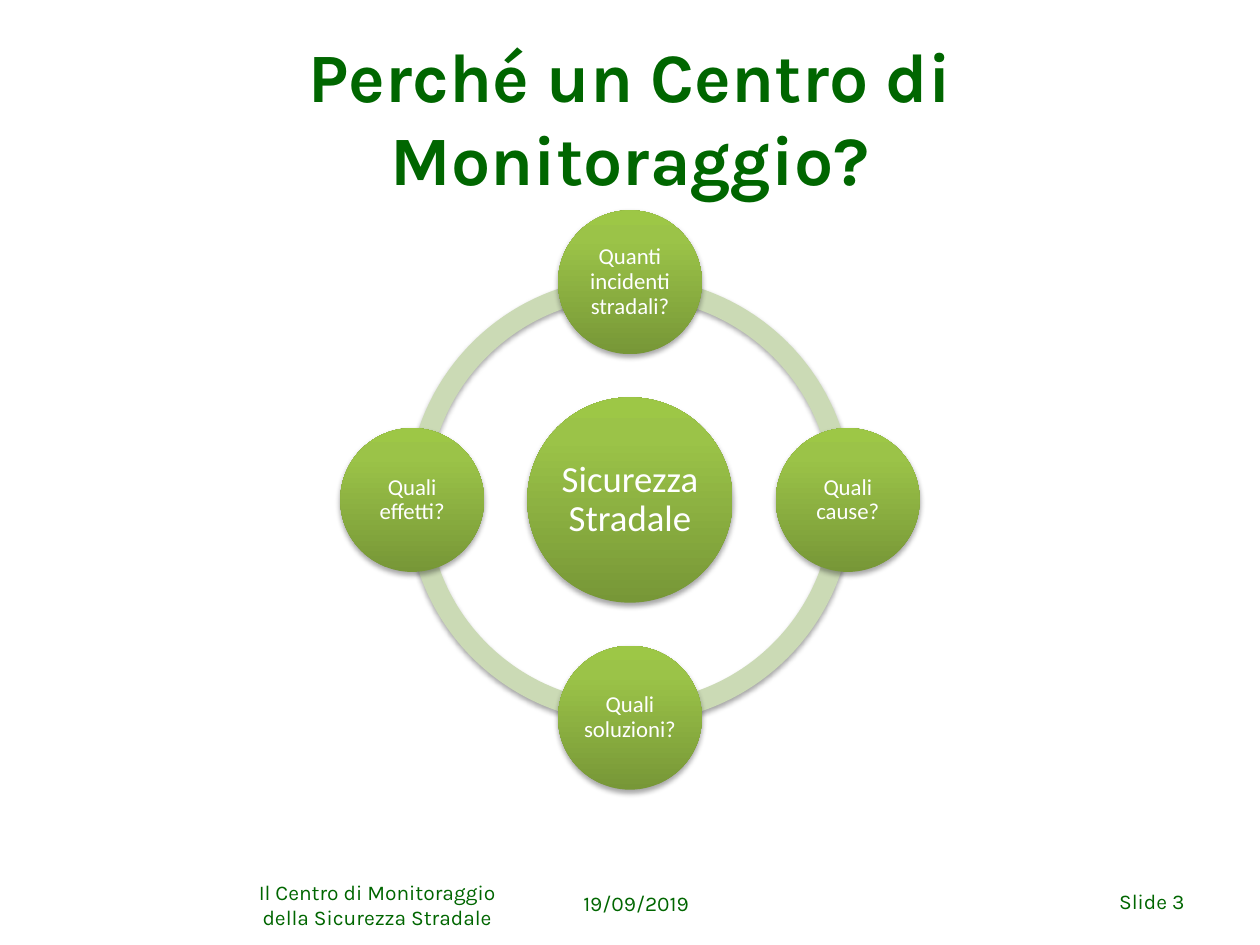
from copy import deepcopy
from math import cos, radians, sin

from lxml.etree import SubElement
from pptx import Presentation
from pptx.dml.color import RGBColor
from pptx.enum.shapes import MSO_SHAPE
from pptx.enum.text import MSO_ANCHOR, MSO_AUTO_SIZE, PP_ALIGN
from pptx.oxml.ns import qn
from pptx.util import Cm, Pt

DARK_GREEN = RGBColor(0x00, 0x66, 0x00)
PALE_GREEN = RGBColor(0xCB, 0xDA, 0xB5)
WHITE = RGBColor(0xFF, 0xFF, 0xFF)
BALL_GRADIENT = [
    (0, RGBColor(0x77, 0x97, 0x37)),
    (0.8, RGBColor(0x9B, 0xC3, 0x48)),
    (1, RGBColor(0x9D, 0xC7, 0x46)),
]

CENTRE_X, CENTRE_Y = 12.7, 10.08
ORBIT = 4.39
RING_SIZE, HUB_SIZE, BALL_SIZE = 8.99, 4.14, 2.9
QUESTIONS = [
    "Quanti incidenti stradali?",
    "Quali cause?",
    "Quali soluzioni?",
    "Quali effetti?",
]


class RingSlide:
    """Holds the page, its fonts and the drawing of each kind of element."""

    heading_font = "Karla"
    ball_font = "Calibri"

    def __init__(self, page):
        self.page = page

    def add_text(self, frame, text, font, size, color, align, bold=False):
        frame.word_wrap = True
        frame.auto_size = MSO_AUTO_SIZE.NONE
        frame.vertical_anchor = MSO_ANCHOR.MIDDLE
        para = frame.paragraphs[0]
        para.alignment = align
        span = para.add_run()
        span.text = text
        span.font.name = font
        span.font.size = Pt(size)
        span.font.bold = bold
        span.font.color.rgb = color
        return para

    def title(self, text):
        box = self.page.shapes.title
        box.left, box.top, box.width, box.height = Cm(1.27), Cm(0.76), Cm(22.86), Cm(3.18)
        self.add_text(box.text_frame, text, self.heading_font, 39.6, DARK_GREEN,
                      PP_ALIGN.CENTER, bold=True)

    def footer(self, text, left, top, width, align):
        box = self.page.shapes.add_textbox(Cm(left), Cm(top), Cm(width), Cm(1.02))
        self.add_text(box.text_frame, text, self.heading_font, 12, DARK_GREEN, align)

    def centred_shape(self, kind, x, y, size):
        """Add a lineless square shape around a point, with a soft shadow below."""
        shape = self.page.shapes.add_shape(
            kind, Cm(x - size / 2), Cm(y - size / 2), Cm(size), Cm(size))
        shape.line.fill.background()
        shape.shadow.inherit = False
        effects = shape._element.spPr.find(qn("a:effectLst"))
        shadow = SubElement(effects, qn("a:outerShdw"), blurRad=str(Pt(3.1)),
                            dist=str(Pt(1.8)), dir="5400000", rotWithShape="0")
        color = SubElement(shadow, qn("a:srgbClr"), val="000000")
        SubElement(color, qn("a:alpha"), val="35000")
        return shape

    def quarter_ring(self, start):
        """Add a quarter of the ring, clockwise from start degrees."""
        arc = self.centred_shape(MSO_SHAPE.BLOCK_ARC, CENTRE_X, CENTRE_Y, RING_SIZE)
        # Angles are stored in 60000ths of a degree, adjustments in 100000ths
        arc.adjustments[0] = start * 0.6
        arc.adjustments[1] = (start + 90) % 360 * 0.6
        arc.adjustments[2] = 0.046
        arc.fill.solid()
        arc.fill.fore_color.rgb = PALE_GREEN

    def ball(self, text, x, y, size, font_size, inset):
        ball = self.centred_shape(MSO_SHAPE.OVAL, x, y, size)
        ball.fill.gradient()
        ball.fill.gradient_angle = 90
        stop_list = ball._element.spPr.find(".//" + qn("a:gsLst"))
        stop_list.append(deepcopy(stop_list[-1]))
        for stop, (position, color) in zip(ball.fill.gradient_stops, BALL_GRADIENT):
            stop.position = position
            stop.color.rgb = color
        frame = ball.text_frame
        frame.margin_left = frame.margin_right = Cm(inset)
        frame.margin_top = frame.margin_bottom = Cm(inset)
        para = self.add_text(frame, text, self.ball_font, font_size, WHITE, PP_ALIGN.CENTER)
        para.line_spacing = 0.9


def main():
    deck = Presentation()
    deck.slide_width, deck.slide_height = Cm(25.4), Cm(19.05)
    slide = RingSlide(deck.slides.add_slide(deck.slide_layouts[5]))

    slide.title("Perché un Centro di Monitoraggio?")
    for start in (180, 90, 0, 270):
        slide.quarter_ring(start)
    slide.ball("Sicurezza Stradale", CENTRE_X, CENTRE_Y, HUB_SIZE, 21, 0.08)
    for index, question in enumerate(QUESTIONS):
        angle = radians(90 * index - 90)
        slide.ball(question, CENTRE_X + ORBIT * cos(angle),
                   CENTRE_Y + ORBIT * sin(angle), BALL_SIZE, 13, 0.05)

    slide.footer("19/09/2019", 11.51, 17.7, 2.79, PP_ALIGN.LEFT)
    slide.footer("Slide 3", 21.89, 17.65, 2.24, PP_ALIGN.RIGHT)
    slide.footer("Il Centro di Monitoraggio della Sicurezza Stradale",
                 4.9, 17.73, 5.41, PP_ALIGN.CENTER)
    deck.save("out.pptx")


if __name__ == "__main__":
    main()
